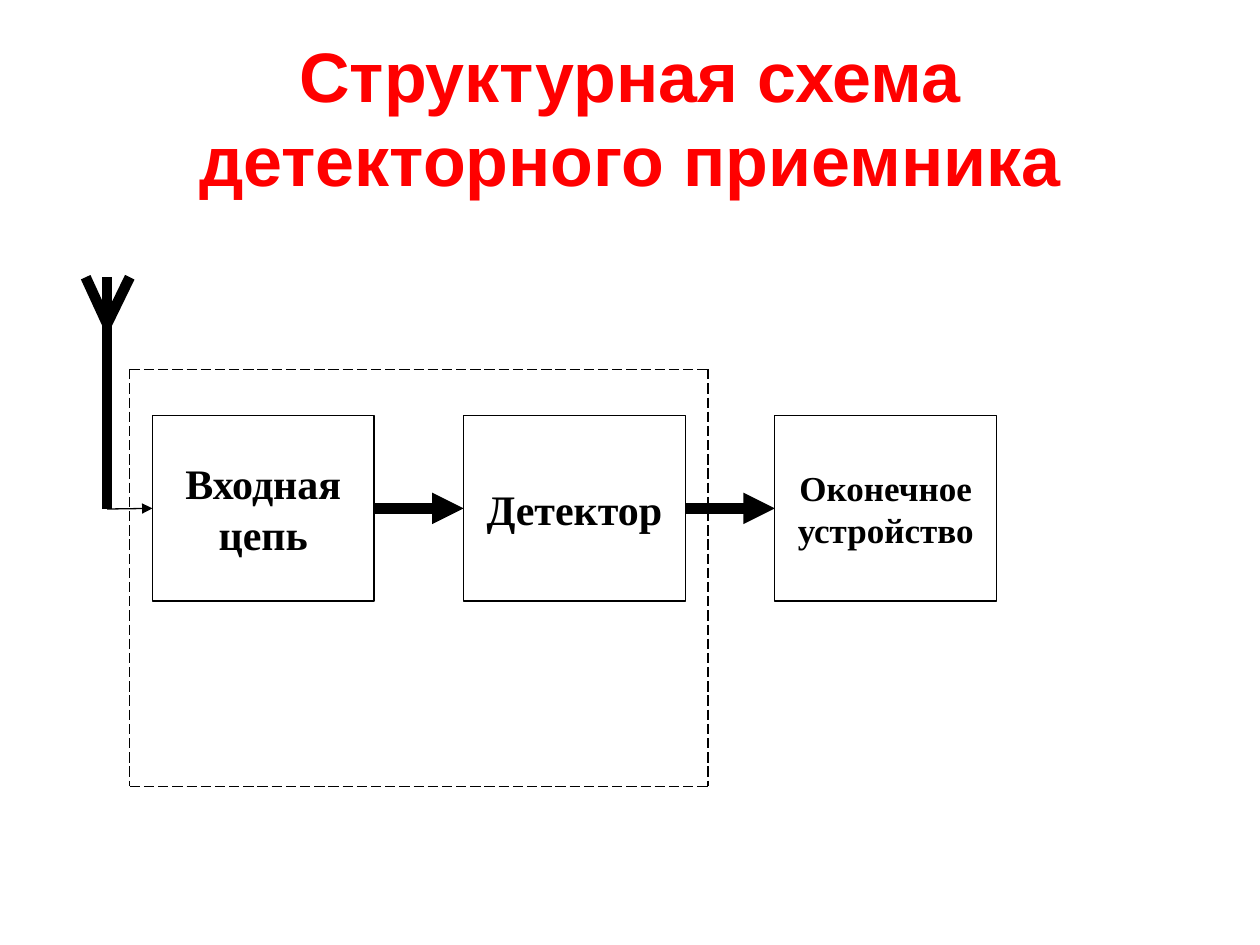
from lxml.etree import SubElement
from pptx import Presentation
from pptx.dml.color import RGBColor
from pptx.enum.dml import MSO_LINE
from pptx.enum.shapes import MSO_CONNECTOR, MSO_SHAPE
from pptx.enum.text import MSO_ANCHOR, PP_ALIGN
from pptx.oxml.ns import qn
from pptx.util import Inches, Pt

TITLE = "Структурная схема детекторного приемника"
BLOCKS = [("Входная цепь", 24), ("Детектор", 24), ("Оконечное устройство", 20)]
THEME = {
    "red": RGBColor(255, 0, 0),
    "black": RGBColor(0, 0, 0),
    "white": RGBColor(255, 255, 255),
    "alpha": "34000",
    "head": "Arial",
    "body": "Times New Roman",
    "title": 40,
    "thin": 0.75,
    "thick": 6,
}

LEFT, TOP, WIDE, HIGH, STEP = 1.21, 3.3, 1.76, 1.47, 2.47
MAST, TIP, FORK = 0.85, 2.2, 2.57
MID = 4.04
FRAME = [(1.03, 2.93), (5.62, 2.93), (5.62, 6.24), (1.03, 6.24)]

deck = Presentation()
deck.slide_width, deck.slide_height = Inches(10), Inches(7.5)
slide = deck.slides.add_slide(deck.slide_layouts[6])


def write(shape, text, size, font, color):
    frame = shape.text_frame
    frame.word_wrap = True
    frame.vertical_anchor = MSO_ANCHOR.MIDDLE
    para = frame.paragraphs[0]
    para.alignment = PP_ALIGN.CENTER
    run = para.add_run()
    run.text = text
    run.font.size = Pt(size)
    run.font.name = font
    run.font.bold = True
    run.font.color.rgb = color


def draw(start, end, width, dash=None, arrow=False):
    line = slide.shapes.add_connector(
        MSO_CONNECTOR.STRAIGHT, *[Inches(v) for v in start + end])
    line.line.width = Pt(width)
    line.line.color.rgb = THEME["black"]
    if dash:
        line.line.dash_style = dash
    if arrow:
        SubElement(line.line._get_or_add_ln(), qn("a:tailEnd"), type="triangle")
    SubElement(line._element.spPr, qn("a:effectLst"))
    return line


def block(left, text, size):
    box = slide.shapes.add_shape(
        MSO_SHAPE.RECTANGLE, *[Inches(v) for v in (left, TOP, WIDE, HIGH)])
    box.shadow.inherit = False
    box.fill.solid()
    box.fill.fore_color.rgb = THEME["white"]
    tint = box._element.spPr.find(qn("a:solidFill"))[0]
    SubElement(tint, qn("a:alpha"), val=THEME["alpha"])
    box.line.color.rgb = THEME["black"]
    box.line.width = Pt(THEME["thin"])
    write(box, text, size=size, font=THEME["body"], color=THEME["black"])
    return box


head = slide.shapes.add_textbox(Inches(0.5), Inches(0.3), Inches(9), Inches(1.25))
write(head, TITLE, size=THEME["title"], font=THEME["head"], color=THEME["red"])

boxes = [block(LEFT + i * STEP, *item) for i, item in enumerate(BLOCKS)]

feed = draw((MAST, MID), (LEFT, MID), THEME["thin"], arrow=True)
feed.end_connect(boxes[0], 1)
draw((MAST, MID), (MAST, TIP), THEME["thick"])
for x in (1.03, 0.68):
    draw((MAST, FORK), (x, TIP), THEME["thick"])

for i, (one, two) in enumerate(zip(boxes, boxes[1:])):
    x = LEFT + i * STEP
    link = draw((x + WIDE, MID), (x + STEP, MID), THEME["thick"], arrow=True)
    link.begin_connect(one, 3)
    link.end_connect(two, 1)

for start, end in zip(FRAME, FRAME[1:] + FRAME[:1]):
    draw(min(start, end), max(start, end), THEME["thin"], dash=MSO_LINE.LONG_DASH)

deck.save("out.pptx")
